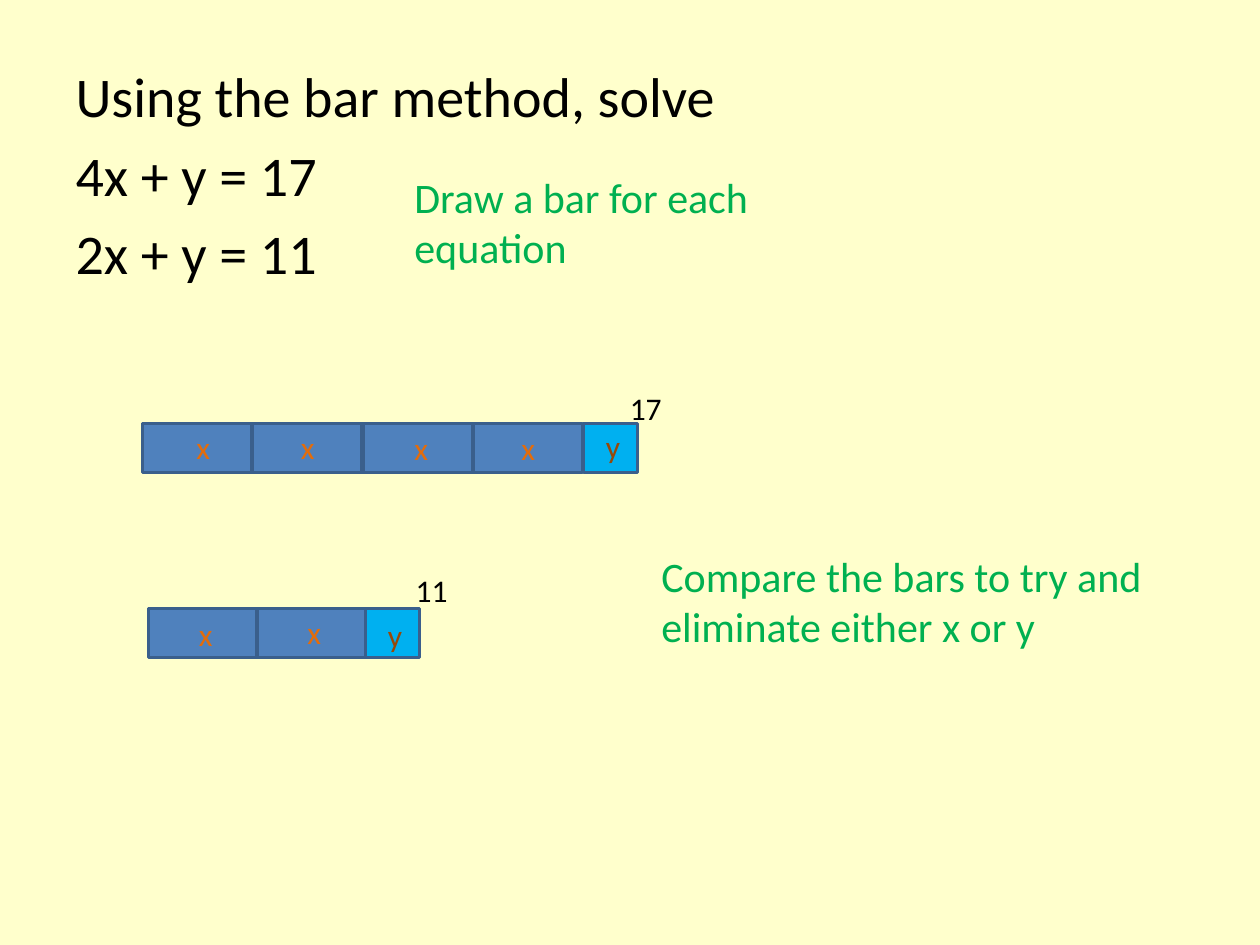
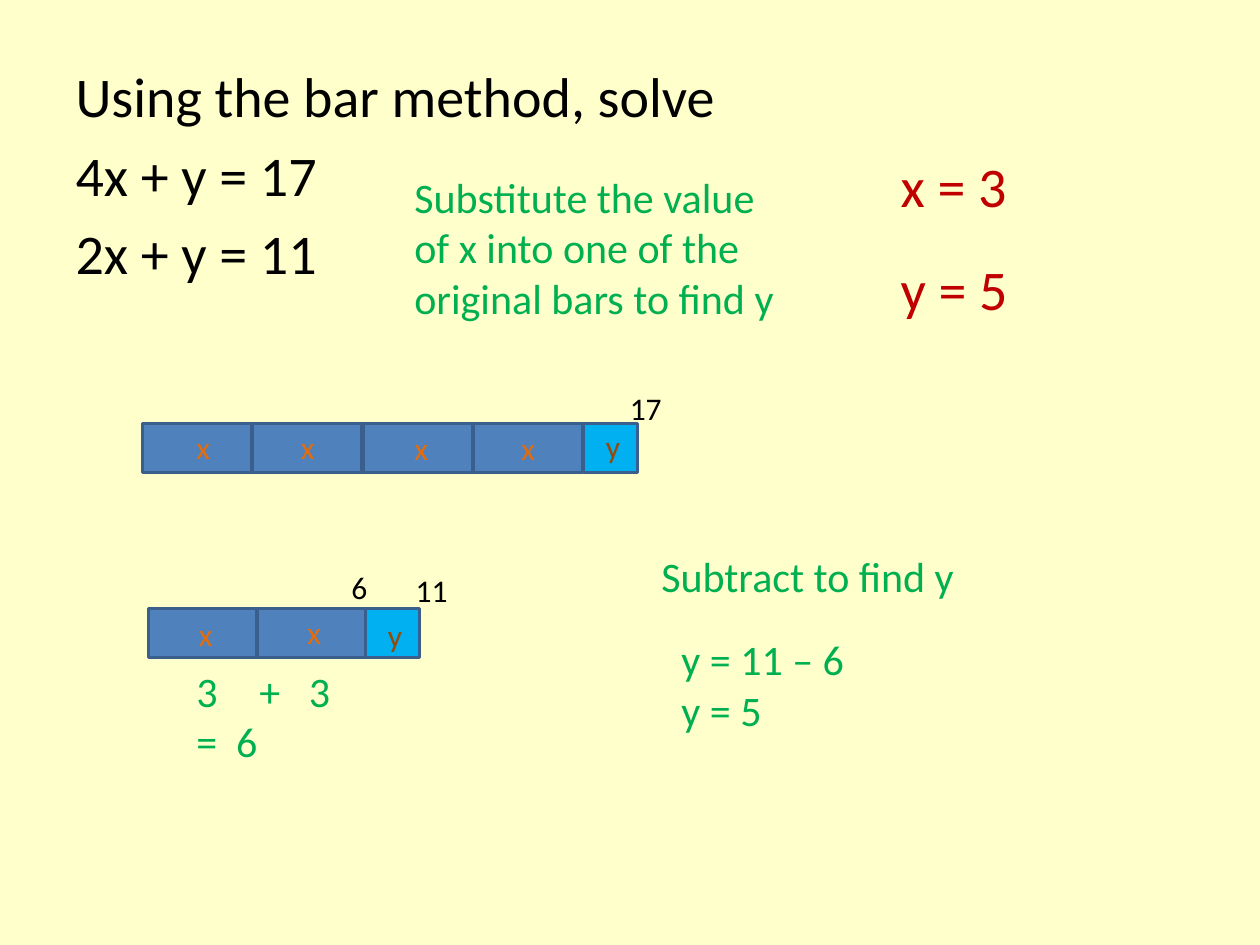
from lxml import etree
from pptx import Presentation
from pptx.dml.color import RGBColor
from pptx.enum.shapes import MSO_SHAPE
from pptx.enum.text import MSO_AUTO_SIZE
from pptx.oxml.ns import qn
from pptx.util import Inches, Pt

RECTANGLE = MSO_SHAPE.RECTANGLE
GROW = MSO_AUTO_SIZE.SHAPE_TO_FIT_TEXT
NO_FIT = MSO_AUTO_SIZE.NONE

CREAM, BLACK, GREEN, RED = "FFFFCC", "000000", "00B050", "C00000"
X_FILL, Y_FILL, CELL_LINE = "4F81BD", "00B0F0", "3A5F8C"
X_TEXT, Y_TEXT = "E46C0A", "984807"
CELL_WIDTH = {"x": 0.87, "y": 0.43}
CELL_FILL = {"x": X_FILL, "y": Y_FILL}
LABEL_COLOUR = {"x": X_TEXT, "y": Y_TEXT}

QUESTION = ["Using the bar method, solve", "4x + y = 17", "2x + y = 11"]

# Each label is placed by its own left and top.
BARS = [
    {"left": 1.13, "y_left": 4.63, "top": 3.36, "cells": "xxxxy",
     "total": ("17", 4.9, 3.04),
     "labels": [(1.46, 3.35), (2.29, 3.35), (3.19, 3.36), (4.04, 3.36), (4.71, 3.34)]},
    {"left": 1.18, "y_left": 2.9, "top": 4.83, "cells": "xxy",
     "total": ("11", 3.2, 4.48),
     "labels": [(1.48, 4.83), (2.34, 4.82), (2.98, 4.84)]},
]

# Text lines, left, top, width, height, size, colour
NOTES = [
    [
        (["Draw a bar for each equation"], 3.19, 1.31, 2.99, 0.91, 24, GREEN),
        (["Compare the bars to try and eliminate either x or y"],
         5.15, 4.32, 4.32, 0.91, 24, GREEN),
    ],
    [
        (["Substitute the value of x into one of the original bars to find y"],
         3.19, 1.31, 3.07, 1.31, 24, GREEN),
        (["Subtract to find y"], 5.15, 4.32, 2.53, 0.5, 24, GREEN),
        (["6"], 2.69, 4.46, 0.44, 0.4, 18, BLACK),
        (["y = 11 – 6", "y = 5"], 5.31, 4.98, 2.53, 0.91, 24, GREEN),
        (["x = 3"], 7.05, 1.15, 1.86, 0.64, 32, RED),
        (["y = 5"], 7.05, 1.97, 1.86, 0.64, 32, RED),
    ],
]


def write_lines(text_frame, lines, size, colour):
    """Fill a text frame; a line is a string or a list of run strings."""
    text_frame.word_wrap = True
    font_format = {"name": "Calibri", "size": Pt(size)}
    for index, line in enumerate(lines):
        paragraph = text_frame.paragraphs[0] if index == 0 else text_frame.add_paragraph()
        for text in [line] if isinstance(line, str) else line:
            run = paragraph.add_run()
            run.text = text
            run.font.color.rgb = RGBColor.from_string(colour)
            for name, value in font_format.items():
                setattr(run.font, name, value)


def add_text(shapes, lines, left, top, width, height, size, colour):
    box = shapes.add_textbox(Inches(left), Inches(top), Inches(width), Inches(height))
    write_lines(box.text_frame, lines, size, colour)
    box.text_frame.auto_size = GROW
    return box


presentation = Presentation()
presentation.slide_width = Inches(10)
presentation.slide_height = Inches(7.5)
background = presentation.slide_master.background.fill
background.solid()
background.fore_color.rgb = RGBColor.from_string(CREAM)

for notes in NOTES:
    slide = presentation.slides.add_slide(presentation.slide_layouts[1])
    title = slide.shapes.title.element
    title.getparent().remove(title)

    question = slide.placeholders[1]
    placement = {"left": 0.5, "top": 0.44, "width": 9, "height": 2.36}
    for name, value in placement.items():
        setattr(question, name, Inches(value))
    write_lines(question.text_frame, QUESTION, 32, BLACK)
    question.text_frame.auto_size = NO_FIT
    for paragraph in question.text_frame.paragraphs:
        properties = paragraph._p.get_or_add_pPr()
        properties.set("marL", "0")
        properties.set("indent", "0")
        etree.SubElement(properties, qn("a:buNone"))

    for bar in BARS:
        group = slide.shapes.add_group_shape()
        pitch = (bar["y_left"] - bar["left"]) / bar["cells"].count("x")
        for index, letter in enumerate(bar["cells"]):
            cell = group.shapes.add_shape(
                RECTANGLE, Inches(bar["left"] + index * pitch), Inches(bar["top"]),
                Inches(CELL_WIDTH[letter]), Inches(0.39))
            cell.shadow.inherit = False
            cell.fill.solid()
            cell.fill.fore_color.rgb = RGBColor.from_string(CELL_FILL[letter])
            cell.line.color.rgb = RGBColor.from_string(CELL_LINE)
            cell.line.width = Pt(2)
        for letter, (left, top) in zip(bar["cells"], bar["labels"]):
            add_text(group.shapes, [letter], left, top, 0.28, 0.4, 18, LABEL_COLOUR[letter])
        total, left, top = bar["total"]
        add_text(group.shapes, [total], left, top, 0.55, 0.4, 18, BLACK)

    for note in notes:
        add_text(slide.shapes, *note)

# The sum under the second bar: its first 3 is an automatic number.
sum_box = add_text(slide.shapes, [["+ ", "3"], ["= ", "6"]], 1.46, 5.23, 1.4, 0.91, 24, GREEN)
sum_line, result_line = sum_box.text_frame.paragraphs
properties = sum_line._p.get_or_add_pPr()
properties.set("marL", str(Inches(0.5)))
properties.set("indent", str(Inches(-0.5)))
etree.SubElement(properties, qn("a:buFont"), typeface="+mj-lt")
etree.SubElement(properties, qn("a:buAutoNum"), type="arabicPlain", startAt="3")
for paragraph, letter_spacing in [(sum_line, 550), (result_line, 270)]:
    paragraph.runs[0].font._element.set("spc", str(letter_spacing))

presentation.save("out.pptx")
